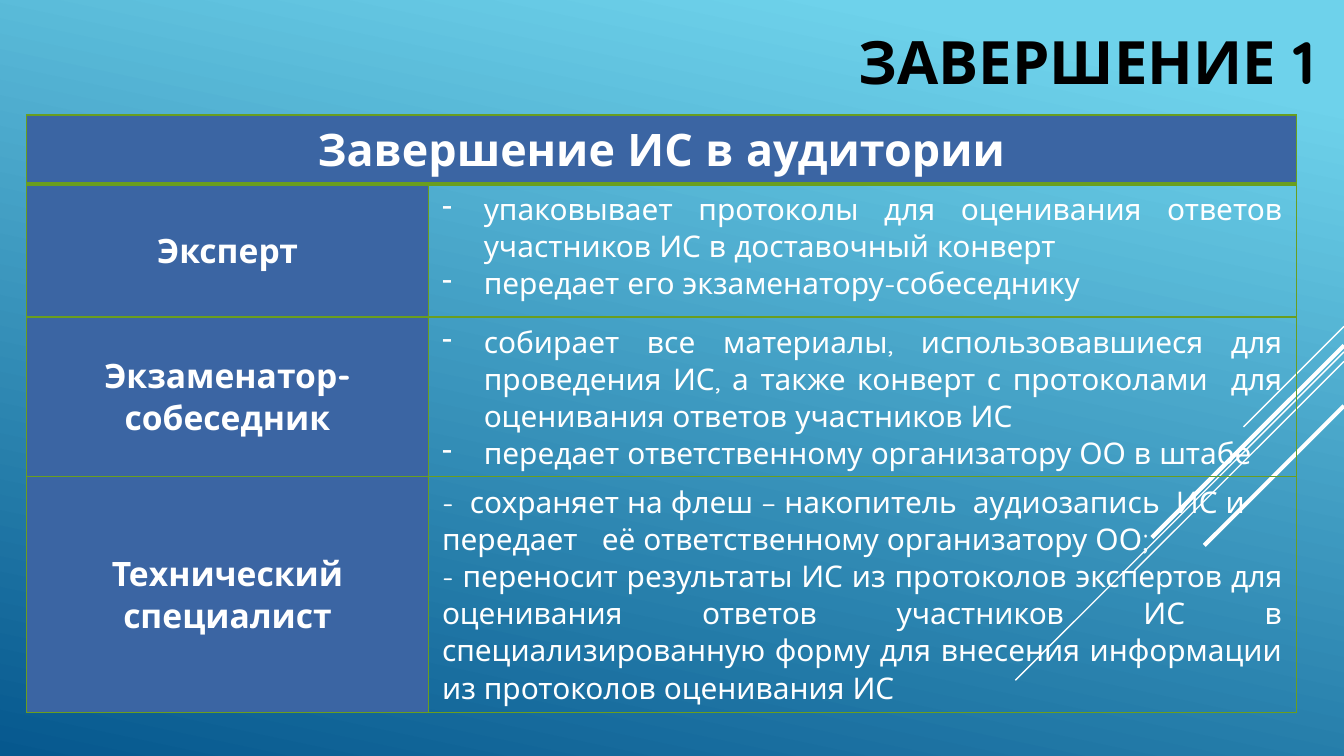
from pptx import Presentation
from pptx.dml.color import RGBColor
from pptx.enum.shapes import MSO_CONNECTOR
from pptx.enum.text import MSO_ANCHOR, PP_ALIGN
from pptx.oxml.ns import qn
from pptx.util import Cm, Pt
from lxml.etree import SubElement

COLORS = {
    "sky": "6ED2EB",
    "deep": "06588E",
    "white": "FFFFFF",
    "black": "000000",
    "header": "3B65A3",
    "border": "6A9E1F",
}
FONT = "Quicksand"
SLIDE_WIDTH, SLIDE_HEIGHT = 25.4, 14.29

# Each stripe: y on the right edge, length of its 45-degree run (cm), width (pt)
STRIPES = [
    (6.17, 1.9, 0.75),
    (6.65, 6.21, 0.75),
    (6.83, 3.96, 0.75),
    (6.53, 3.63, 2.25),
    (7.67, 2.64, 2.25),
]
COLUMN_WIDTHS = [7.6, 16.4]
ROW_HEIGHTS = [1.31, 2.51, 3.02, 4.46]
HEADING = "Завершение ИС в аудитории"
LEFT, JUSTIFY = PP_ALIGN.LEFT, PP_ALIGN.JUSTIFY

# Each duty row: role, whether its list is bulleted, (text, alignment) items
DUTIES = [
    ("Эксперт", True, [
        ("упаковывает протоколы для оценивания ответов участников ИС "
         "в доставочный конверт", JUSTIFY),
        ("передает его экзаменатору-собеседнику", JUSTIFY),
    ]),
    ("Экзаменатор-собеседник", True, [
        ("собирает все материалы, использовавшиеся для проведения ИС, "
         "а также конверт с протоколами  для оценивания ответов участников ИС",
         JUSTIFY),
        ("передает ответственному организатору ОО в штабе", JUSTIFY),
    ]),
    ("Технический специалист", False, [
        ("-  сохраняет на флеш – накопитель  аудиозапись  ИС и передает   "
         "её ответственному организатору ОО;", LEFT),
        ("- переносит результаты ИС из протоколов экспертов для оценивания "
         "ответов участников ИС в специализированную форму для внесения "
         "информации из протоколов оценивания ИС", JUSTIFY),
    ]),
]


def color(name):
    return RGBColor.from_string(COLORS[name])


def write_paragraph(paragraph, text, size, alignment, bold=False, ink="white"):
    paragraph.text = text
    paragraph.alignment = alignment
    for run in paragraph.runs:
        run.font.name = FONT
        run.font.size = Pt(size)
        run.font.bold = bold
        run.font.color.rgb = color(ink)


def add_dash_bullet(paragraph):
    properties = paragraph._p.get_or_add_pPr()
    properties.set("marL", str(Cm(0.79)))
    properties.set("indent", str(-Cm(0.79)))
    SubElement(properties, qn("a:buChar"), char="-")


def paint_background(slide):
    fill = slide.background.fill
    fill.gradient()
    fill.gradient_angle = 360 - 102
    for stop, name, position in zip(fill.gradient_stops, ("sky", "deep"), (0.1, 1)):
        stop.color.rgb = color(name)
        stop.position = position


def add_stripe(slide, top, run, width):
    """Draw a 45-degree line down and left from the slide's right edge."""
    stripe = slide.shapes.add_connector(
        MSO_CONNECTOR.STRAIGHT, Cm(SLIDE_WIDTH), Cm(top),
        Cm(SLIDE_WIDTH - run), Cm(top + run))
    stripe.line.color.rgb = color("white")
    stripe.line.width = Pt(width)
    SubElement(stripe._element.spPr, qn("a:effectLst"))


def add_title(slide, text):
    box = slide.shapes.add_textbox(Cm(7.9), Cm(0.15), Cm(17.2), Cm(2))
    frame = box.text_frame
    frame.word_wrap = True
    frame.vertical_anchor = MSO_ANCHOR.MIDDLE
    write_paragraph(frame.paragraphs[0], text, 32, PP_ALIGN.RIGHT, True, "black")


def set_borders(cell, top=1, bottom=1):
    properties = cell._tc.get_or_add_tcPr()
    for side, width in (("L", 1), ("R", 1), ("T", top), ("B", bottom)):
        line = SubElement(properties, qn(f"a:ln{side}"), w=str(Pt(width)))
        fill = SubElement(line, qn("a:solidFill"))
        SubElement(fill, qn("a:srgbClr"), val=COLORS["border"])


def fill_heading_cell(cell, text, size):
    cell.fill.solid()
    cell.fill.fore_color.rgb = color("header")
    cell.vertical_anchor = MSO_ANCHOR.MIDDLE
    write_paragraph(cell.text_frame.paragraphs[0], text, size, PP_ALIGN.CENTER, True)


def fill_duty_cell(cell, bulleted, items):
    cell.fill.background()
    frame = cell.text_frame
    for index, (text, alignment) in enumerate(items):
        paragraph = frame.add_paragraph() if index else frame.paragraphs[0]
        write_paragraph(paragraph, text, 16, alignment)
        if bulleted:
            add_dash_bullet(paragraph)


def add_duty_table(slide):
    table = slide.shapes.add_table(
        len(ROW_HEIGHTS), len(COLUMN_WIDTHS), Cm(0.5), Cm(2.17),
        Cm(sum(COLUMN_WIDTHS)), Cm(sum(ROW_HEIGHTS))).table
    table.first_row = table.horz_banding = False
    for column, width in zip(table.columns, COLUMN_WIDTHS):
        column.width = Cm(width)
    for index, (row, height) in enumerate(zip(table.rows, ROW_HEIGHTS)):
        row.height = Cm(height)
        for cell in row.cells:
            set_borders(cell, 2 if index == 1 else 1, 2 if index == 0 else 1)

    table.cell(0, 0).merge(table.cell(0, 1))
    fill_heading_cell(table.cell(0, 0), HEADING, 24)
    for index, (role, bulleted, items) in enumerate(DUTIES, start=1):
        fill_heading_cell(table.cell(index, 0), role, 18)
        fill_duty_cell(table.cell(index, 1), bulleted, items)


def main():
    presentation = Presentation()
    presentation.slide_width = Cm(SLIDE_WIDTH)
    presentation.slide_height = Cm(SLIDE_HEIGHT)
    slide = presentation.slides.add_slide(presentation.slide_layouts[6])
    paint_background(slide)
    for stripe in STRIPES:
        add_stripe(slide, *stripe)
    add_title(slide, "ЗАВЕРШЕНИЕ 1")
    add_duty_table(slide)
    presentation.save("out.pptx")


if __name__ == "__main__":
    main()
